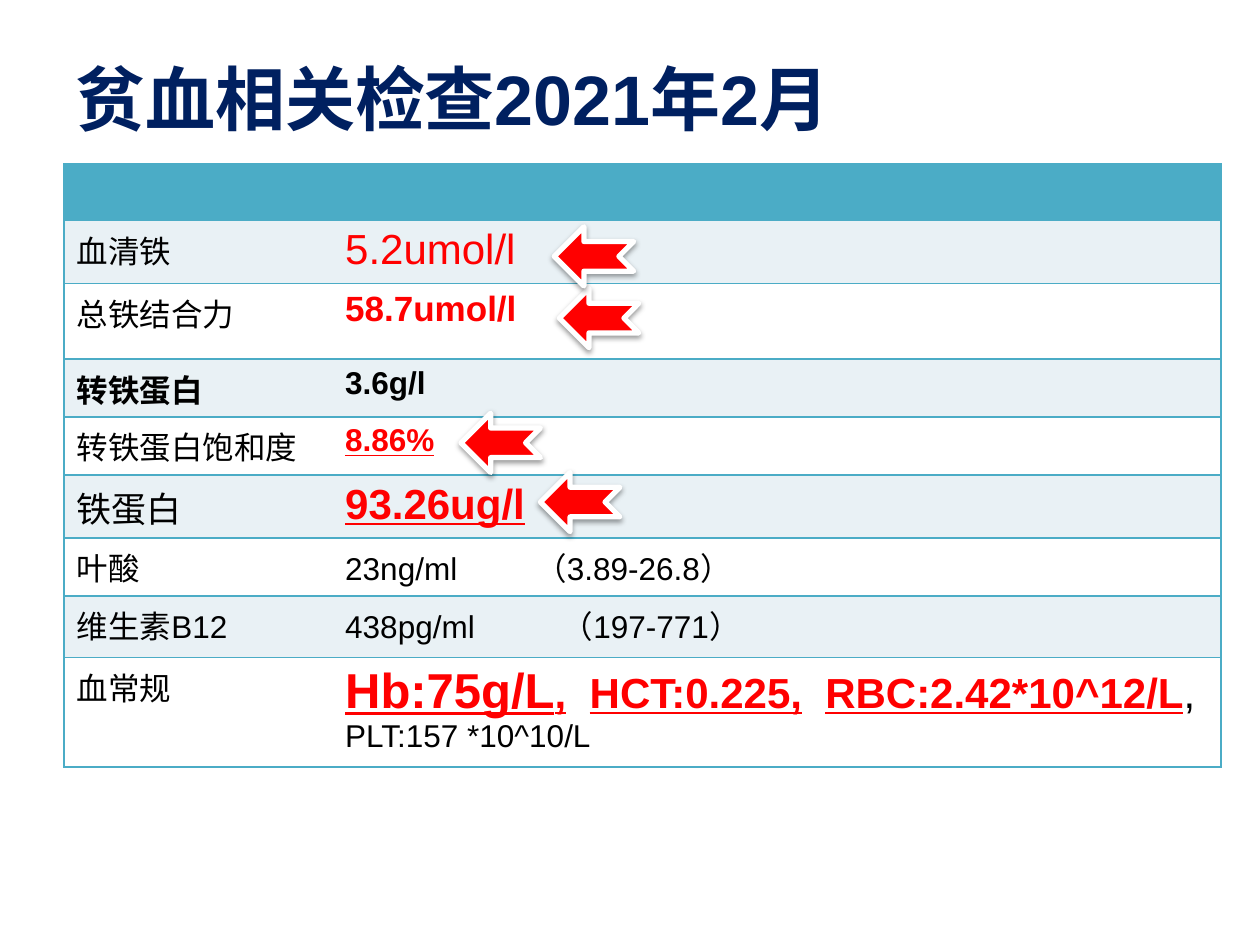
from lxml import etree
from pptx import Presentation
from pptx.dml.color import RGBColor
from pptx.enum.shapes import MSO_SHAPE
from pptx.enum.text import MSO_ANCHOR
from pptx.oxml import parse_xml
from pptx.oxml.ns import nsdecls, qn
from pptx.util import Inches, Pt

NOTCHED_ARROW = MSO_SHAPE.NOTCHED_RIGHT_ARROW
MIDDLE = MSO_ANCHOR.MIDDLE

NAVY = RGBColor(0x00, 0x20, 0x60)
TEAL = RGBColor(0x4B, 0xAC, 0xC6)
PALE = RGBColor(0xE9, 0xF1, 0xF5)
WHITE = RGBColor(0xFF, 0xFF, 0xFF)
BLACK = RGBColor(0x00, 0x00, 0x00)
RED = RGBColor(0xFF, 0x00, 0x00)

FONT = "Arial"
PLAIN_STYLE = "{2D5ABB26-0587-4C30-8999-92F81FD0307C}"
COLUMN_WIDTHS = [2.13, 7.05]

# A run is (text, size, colour, bold, underline).
# A row is (height, label run, value runs, tab stops of the value).
ROWS = [
    (0.45, None, [], []),
    (0.5, ("血清铁", 18, BLACK, False, False),
     [("5.2umol/l", 24, RED, False, False)], []),
    (0.6, ("总铁结合力", 18, BLACK, False, False),
     [("58.7umol/l", 20, RED, True, False)], []),
    (0.46, ("转铁蛋白", 18, BLACK, True, False),
     [("3.6g/l", 18, BLACK, True, False)], []),
    (0.46, ("转铁蛋白饱和度", 18, BLACK, False, False),
     [("8.86%", 18, RED, True, True)], []),
    (0.5, ("铁蛋白", 20, BLACK, False, False),
     [("93.26ug/l", 24, RED, True, True)], []),
    (0.46, ("叶酸", 18, BLACK, False, False),
     [("23ng/ml\t（3.89-26.8）", 18, BLACK, False, False)], [1.51]),
    (0.49, ("维生素B12", 18, BLACK, False, False),
     [("438pg/ml\t（197-771）", 18, BLACK, False, False)], [1.72]),
    (0.81, ("血常规", 18, BLACK, False, False),
     [("Hb:75g/L", 28, RED, True, True),
      (",\tHCT:0.225,\tRBC:2.42*10^12/L", 24, RED, True, True),
      (", ", 24, BLACK, False, False),
      ("PLT:157 *10^10/L", 18, BLACK, False, False)], [1.94, 3.81]),
]

ARROW_POSITIONS = [(3.66, 3.28), (4.4, 1.8), (4.44, 2.29), (4.29, 3.75)]


def add_run(paragraph, text, size, color, bold, underline):
    run = paragraph.add_run()
    run.text = text
    run.font.name = FONT
    run.font.size = Pt(size)
    run.font.color.rgb = color
    run.font.bold = bold
    run.font.underline = underline


def add_tab_stops(paragraph, stops):
    properties = paragraph._p.get_or_add_pPr()
    tab_list = etree.SubElement(properties, qn("a:tabLst"))
    for stop in stops:
        etree.SubElement(tab_list, qn("a:tab"), pos=str(Inches(stop)), algn="l")


def add_borders(cell, sides):
    properties = cell._tc.get_or_add_tcPr()
    for side in sides:
        properties.append(parse_xml(
            f'<a:ln{side} {nsdecls("a")} w="{Pt(1)}"><a:solidFill>'
            f'<a:srgbClr val="{TEAL}"/></a:solidFill></a:ln{side}>'))


def fill_cell(cell, runs, color, sides):
    add_borders(cell, sides)
    cell.fill.solid()
    cell.fill.fore_color.rgb = color
    for run in runs:
        add_run(cell.text_frame.paragraphs[0], *run)


def add_title(slide):
    box = slide.shapes.add_textbox(Inches(0.5), Inches(0.47), Inches(9), Inches(0.61))
    box.text_frame.word_wrap = True
    box.text_frame.vertical_anchor = MIDDLE
    add_run(box.text_frame.paragraphs[0], "贫血相关检查2021年2月", 40, NAVY, True, False)


def add_results_table(slide):
    height = sum(row[0] for row in ROWS)
    frame = slide.shapes.add_table(
        len(ROWS), len(COLUMN_WIDTHS), Inches(0.51), Inches(1.3),
        Inches(sum(COLUMN_WIDTHS)), Inches(height))
    table = frame.table
    table.first_row = False
    table.horz_banding = False
    table._tbl.tblPr.find(qn("a:tableStyleId")).text = PLAIN_STYLE
    for column, width in zip(table.columns, COLUMN_WIDTHS):
        column.width = Inches(width)
    for index, (row_height, label, values, stops) in enumerate(ROWS):
        table.rows[index].height = Inches(row_height)
        color = TEAL if index == 0 else PALE if index % 2 else WHITE
        label_cell, value_cell = table.cell(index, 0), table.cell(index, 1)
        if stops:
            add_tab_stops(value_cell.text_frame.paragraphs[0], stops)
        fill_cell(label_cell, [label] if label else [], color, "LTB")
        fill_cell(value_cell, values, color, "RTB")


def add_arrow(slide, left, top):
    """Add a red notched arrow that points left at an abnormal value."""
    arrow = slide.shapes.add_shape(
        NOTCHED_ARROW, Inches(left), Inches(top), Inches(0.63), Inches(0.47))
    arrow.fill.solid()
    arrow.fill.fore_color.rgb = RED
    arrow.line.color.rgb = WHITE
    arrow.line.width = Pt(3)
    arrow.shadow.inherit = False
    properties = arrow._element.spPr
    properties.find(qn("a:xfrm")).set("flipH", "1")
    properties.find(qn("a:effectLst")).append(parse_xml(
        f'<a:outerShdw {nsdecls("a")} blurRad="{Pt(3.1)}" dist="{Pt(1.6)}" '
        f'dir="5400000" rotWithShape="0"><a:srgbClr val="{BLACK}">'
        '<a:alpha val="38000"/></a:srgbClr></a:outerShdw>'))


def main():
    presentation = Presentation()
    presentation.slide_width = Inches(10)
    presentation.slide_height = Inches(7.5)
    slide = presentation.slides.add_slide(presentation.slide_layouts[6])
    add_title(slide)
    add_results_table(slide)
    for left, top in reversed(ARROW_POSITIONS):
        add_arrow(slide, left, top)
    presentation.save("out.pptx")


if __name__ == "__main__":
    main()
